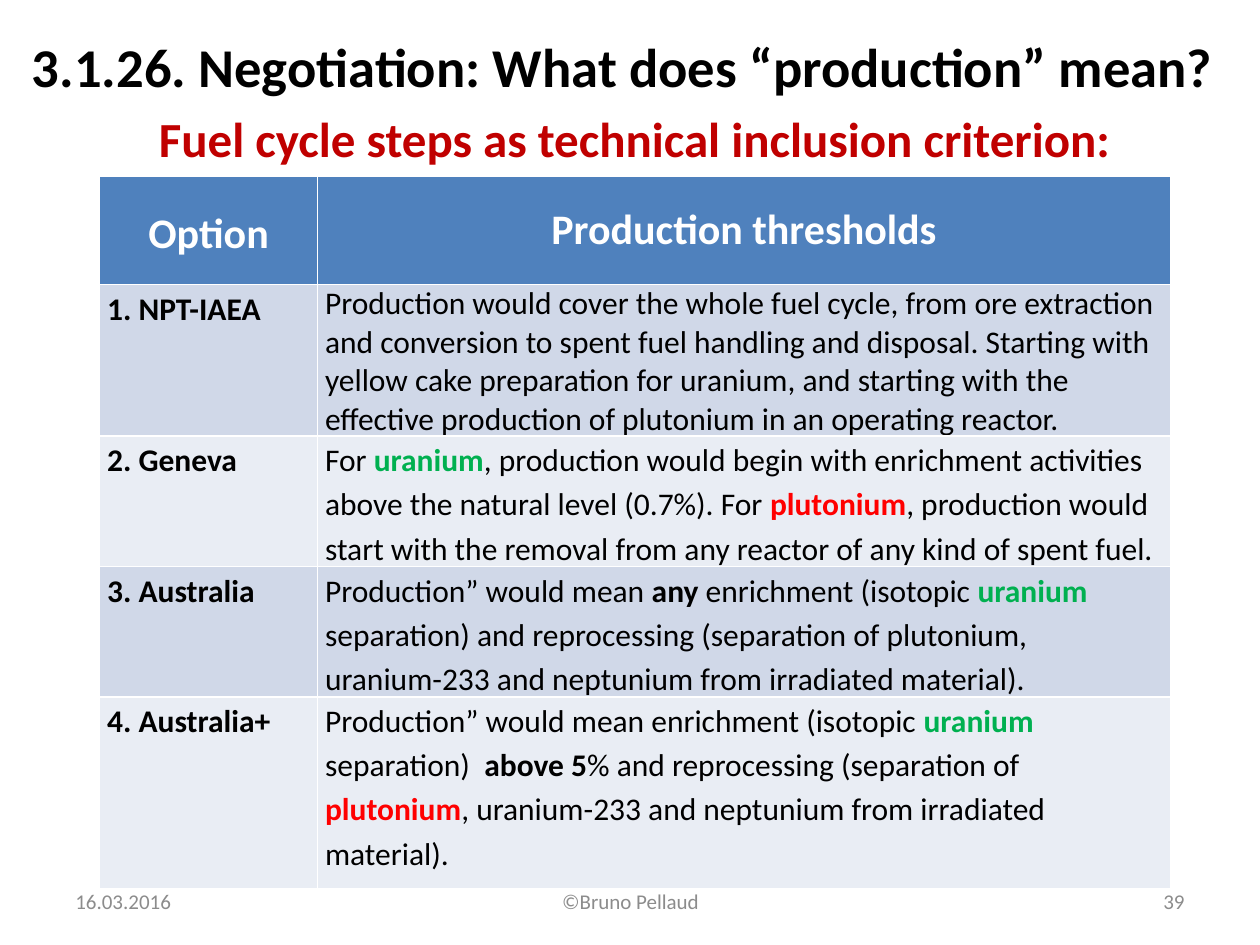
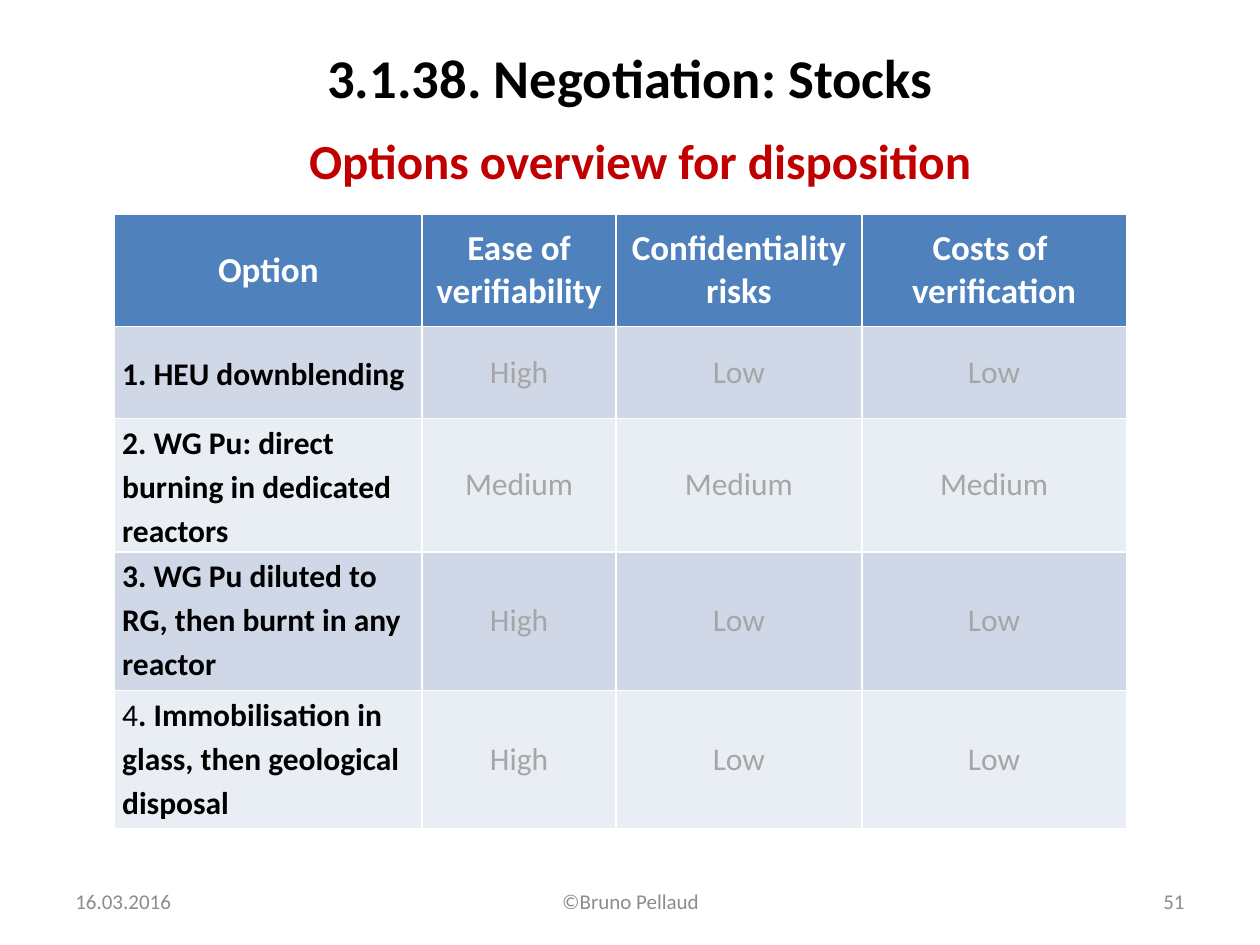
from pptx import Presentation
from pptx.dml.color import RGBColor
from pptx.enum.text import MSO_ANCHOR, MSO_AUTO_SIZE, PP_ALIGN
from pptx.util import Inches, Pt

COLOURS = {
    "black": "000000", "white": "FFFFFF", "red": "C00000", "grey": "8C8C8C",
    "rating": "A6A6A6", "header": "4F81BD", "odd": "D0D8E8", "even": "E9EDF4",
    "uranium": "00B050", "plutonium": "FF0000",
}
FONT = "Calibri"
TIGHT, ROOMY = (0.06, 0), (0.1, 0.05)  # cell margins: sides, top and bottom

# Span styles for emphasis inside a text
URANIUM = {"colour": "uranium", "bold": True}
PLUTONIUM = {"colour": "plutonium", "bold": True}
STRONG = {"bold": True}

LABEL = {"bold": True, "spacing": 1.15, "after": 10, "margins": TIGHT}
LOOSE = {"spacing": 1.15, "margins": TIGHT}
HEADING = {"colour": "white", "bold": True, "align": PP_ALIGN.CENTER,
           "anchor": MSO_ANCHOR.MIDDLE, "margins": ROOMY}
RATING = {"colour": "rating", "align": PP_ALIGN.CENTER,
          "anchor": MSO_ANCHOR.MIDDLE, "margins": ROOMY}


def write(frame, content, size=18, colour="black", bold=False,
          align=PP_ALIGN.LEFT, spacing=None, after=None):
    """Write a text (one paragraph a line) or a list of (text, style) spans."""
    lines = ([[(line, {})] for line in content.split("\n")]
             if isinstance(content, str) else [content])
    for index, spans in enumerate(lines):
        para = frame.add_paragraph() if index else frame.paragraphs[0]
        para.alignment = align
        if spacing:
            para.line_spacing = spacing
        if after:
            para.space_after = Pt(after)
        for text, style in spans:
            span = para.add_run()
            span.text = text
            span.font.name = FONT
            span.font.size = Pt(size)
            span.font.bold = style.get("bold", bold)
            shade = COLOURS[style.get("colour", colour)]
            span.font.color.rgb = RGBColor.from_string(shade)


def add_text(page, box, content, anchor=MSO_ANCHOR.TOP, **style):
    shape = page.shapes.add_textbox(*map(Inches, box))
    frame = shape.text_frame
    frame.word_wrap = True
    frame.vertical_anchor = anchor
    write(frame, content, **style)


def add_title(page, box, text, anchor):
    title = page.shapes.title
    title.left, title.top, title.width, title.height = map(Inches, box)
    title.text_frame.auto_size = MSO_AUTO_SIZE.NONE
    title.text_frame.vertical_anchor = anchor
    write(title.text_frame, text, size=31.2, bold=True, align=PP_ALIGN.CENTER)


def add_footer(page, number):
    top, height = 6.95, 0.4
    for left, width, text, align in (
            (0.5, 2.33, "16.03.2016", PP_ALIGN.LEFT),
            (3.42, 3.17, "©Bruno Pellaud", PP_ALIGN.CENTER),
            (7.17, 2.33, str(number), PP_ALIGN.RIGHT)):
        add_text(page, (left, top, width, height), text, size=12,
                 colour="grey", align=align, anchor=MSO_ANCHOR.MIDDLE)


def fill_cell(cell, fill, content, anchor=MSO_ANCHOR.TOP, margins=ROOMY, **style):
    cell.fill.solid()
    cell.fill.fore_color.rgb = RGBColor.from_string(COLOURS[fill])
    cell.margin_left = cell.margin_right = Inches(margins[0])
    cell.margin_top = cell.margin_bottom = Inches(margins[1])
    cell.vertical_anchor = anchor
    write(cell.text_frame, content, **style)


def add_options_table(page, corner, widths, heights, rows):
    """Place rows of (content, style) cells; the first row is the header."""
    box = (*corner, sum(widths), sum(heights))
    table = page.shapes.add_table(len(heights), len(widths), *map(Inches, box)).table
    for column, width in zip(table.columns, widths):
        column.width = Inches(width)
    for row, height in zip(table.rows, heights):
        row.height = Inches(height)
    for r, cells in enumerate(rows):
        fill = "header" if r == 0 else "odd" if r % 2 else "even"
        for c, (content, style) in enumerate(cells):
            fill_cell(table.cell(r, c), fill, content, **style)


def add_page(deck, title, title_box, title_anchor, subtitle, subtitle_box, number):
    page = deck.slides.add_slide(deck.slide_layouts[5])
    add_title(page, title_box, title, title_anchor)
    add_text(page, subtitle_box, subtitle, size=28, colour="red", bold=True,
             align=PP_ALIGN.CENTER)
    add_footer(page, number)
    return page


def build_production(deck):
    page = add_page(
        deck, "3.1.26. Negotiation: What does “production” mean?",
        (0, 0.13, 9.88, 0.78), MSO_ANCHOR.MIDDLE,
        "Fuel cycle steps as technical inclusion criterion:",
        (1.06, 0.81, 7.95, 0.57), 39)
    thresholds = [
        ("1. NPT-IAEA",
         "Production would cover the whole fuel cycle, from ore extraction and "
         "conversion to spent fuel handling and disposal. Starting with yellow "
         "cake preparation for uranium, and starting with the effective "
         "production of plutonium in an operating reactor.",
         {"after": 10, "margins": TIGHT}),
        ("2. Geneva",
         [("For ", {}), ("uranium", URANIUM),
          (", production would begin with enrichment activities above the "
           "natural level (0.7%). For ", {}),
          ("plutonium", PLUTONIUM),
          (", production would start with the removal from any reactor of any "
           "kind of spent fuel.", {})], LOOSE),
        ("3. Australia",
         [("Production” would mean ", {}), ("any", STRONG),
          (" enrichment (isotopic ", {}), ("uranium", URANIUM),
          (" separation) and reprocessing (separation of plutonium, "
           "uranium-233 and neptunium from irradiated material).", {})], LOOSE),
        ("4. Australia+",
         [("Production” would mean enrichment (isotopic ", {}),
          ("uranium", URANIUM), (" separation)  ", {}), ("above 5", STRONG),
          ("% and reprocessing (separation of ", {}), ("plutonium", PLUTONIUM),
          (", uranium-233 and neptunium from irradiated material).", {})], LOOSE),
    ]
    heading = {**HEADING, "size": 24}
    rows = [[("Option", {**heading, "spacing": 1.15, "margins": TIGHT}),
             ("Production thresholds", heading)]]
    rows += [[(option, LABEL), (text, style)] for option, text, style in thresholds]
    add_options_table(page, (0.79, 1.4), (1.73, 6.77),
                      (0.86, 1.2, 1.03, 1.03, 1.52), rows)


def build_stocks(deck):
    page = add_page(
        deck, "3.1.38. Negotiation: Stocks",
        (0.5, 0.3, 9, 1.25), MSO_ANCHOR.TOP,
        "Options overview for disposition", (0.58, 0.99, 9, 0.61), 51)
    headings = ("Option", "Ease of verifiability", "Confidentiality\nrisks",
                "Costs of \nverification")
    options = [
        ("1. HEU downblending", {**LABEL, "anchor": MSO_ANCHOR.MIDDLE},
         ("High", "Low", "Low")),
        ("2. WG Pu: direct burning in dedicated reactors", LABEL, ("Medium",) * 3),
        ("3. WG Pu diluted to RG, then burnt in any reactor", LABEL,
         ("High", "Low", "Low")),
        ([("4", {"bold": False}),
          (". Immobilisation in glass, then geological disposal", {})], LABEL,
         ("High", "Low", "Low")),
    ]
    rows = [[(text, {**HEADING, "size": 20}) for text in headings]]
    rows += [[(option, style)] + [(rating, RATING) for rating in ratings]
             for option, style, ratings in options]
    add_options_table(page, (0.91, 1.7), (2.44, 1.54, 1.95, 2.1),
                      (0.89, 0.73, 1.06, 1.1, 1.1), rows)


def main():
    deck = Presentation()
    deck.slide_width, deck.slide_height = Inches(10), Inches(7.5)
    build_production(deck)
    build_stocks(deck)
    deck.save("out.pptx")


if __name__ == "__main__":
    main()
